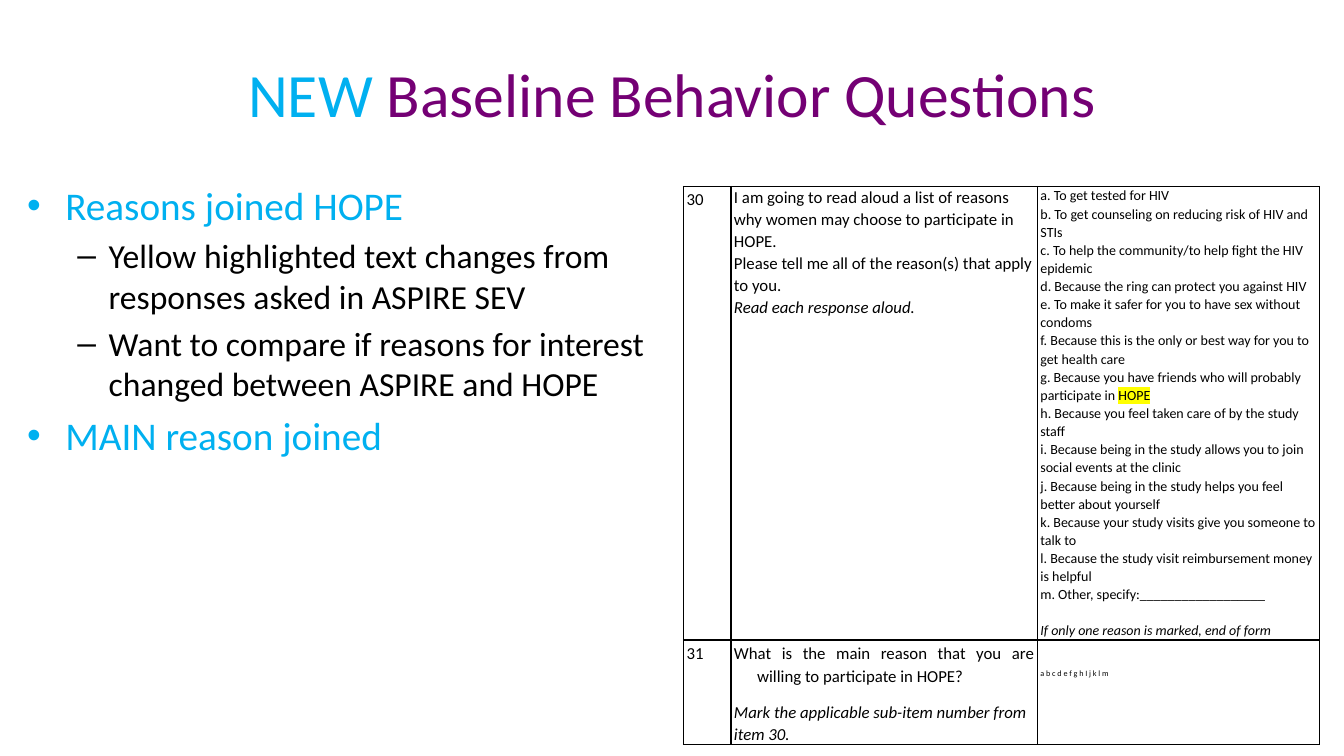
"""Build the slide on new baseline behavior questions."""
from lxml import etree
from pptx import Presentation
from pptx import util as u
from pptx.dml.color import RGBColor
from pptx.enum import text
from pptx.oxml import ns

BLUE = RGBColor(0x00, 0xB0, 0xF0)
PURPLE = RGBColor(0x74, 0x00, 0x74)
BLACK = RGBColor(0, 0, 0)
FONT = "Calibri"

REASONS = [
    "a. To get tested for HIV",
    "b. To get counseling on reducing risk of HIV and STIs",
    "c. To help the community/to help fight the HIV epidemic",
    "d. Because the ring can protect you against HIV",
    "e. To make it safer for you to have sex without condoms",
    "f. Because this is the only or best way for you to get health care",
    "g. Because you have friends who will probably participate in ",
    "h. Because you feel taken care of by the study staff",
    "i. Because being in the study allows you to join social events at the clinic",
    "j. Because being in the study helps you feel better about yourself",
    "k. Because your study visits give you someone to talk to",
    "l. Because the study visit reimbursement money is helpful",
    "m. Other, specify:__________________",
]


def add_element(parent, tag, **attributes):
    """Append a drawing element to its parent."""
    return etree.SubElement(parent, ns.qn(tag), **attributes)


def add_span(para, words, size=12, color=BLACK, italic=False, highlight=None, baseline=None):
    """Add formatted words to a paragraph."""
    span = para.add_run()
    span.text = words
    span.font.name, span.font.size = FONT, u.Pt(size)
    span.font.italic = italic
    span.font.color.rgb = color
    properties = span.font._element
    if highlight:
        mark = etree.Element(ns.qn("a:highlight"))
        add_element(mark, "a:srgbClr", val=highlight)
        properties.find(ns.qn("a:solidFill")).addnext(mark)
    if baseline:
        properties.set("baseline", str(baseline))


def add_para(frame, words, align=None, spacing=None, before=0, after=0,
             margin=0, hanging=0, bullet=None, level=0, **style):
    """Fill the empty first paragraph of a frame or add another one."""
    first = frame.paragraphs[0]
    para = first if not first.runs else frame.add_paragraph()
    para.level = level
    para.alignment = align
    para.line_spacing = spacing
    para.space_before, para.space_after = u.Pt(before), u.Pt(after)
    properties = para._p.get_or_add_pPr()
    properties.set("marL", str(u.Inches(margin)))
    properties.set("indent", str(u.Inches(-hanging)))
    if bullet:
        add_element(properties, "a:buFont", typeface="Arial")
        add_element(properties, "a:buChar", char=bullet)
    add_span(para, words, **style)
    return para


def add_box(page, left, top, width, height, anchor=text.MSO_ANCHOR.TOP):
    """Add a wrapping text box and return its frame."""
    box = page.shapes.add_textbox(*map(u.Inches, (left, top, width, height)))
    frame = box.text_frame
    frame.word_wrap = True
    frame.vertical_anchor = anchor
    return frame


def format_cell(cell):
    """Give a cell black borders, narrow margins and no fill."""
    properties = cell._tc.get_or_add_tcPr()
    for side in "LRTB":
        line = add_element(properties, f"a:ln{side}", w=str(u.Pt(1)))
        fill = add_element(line, "a:solidFill")
        add_element(fill, "a:srgbClr", val=str(BLACK))
    cell.fill.background()
    cell.margin_left = cell.margin_right = u.Inches(0.03)
    cell.margin_top = cell.margin_bottom = 0


def add_grid(page, left, top, widths, heights):
    """Add a plain bordered table."""
    size = (sum(widths), sum(heights))
    table = page.shapes.add_table(
        len(heights), len(widths), *map(u.Inches, (left, top, *size))).table
    table.first_row = table.horz_banding = False
    for column, width in zip(table.columns, widths):
        column.width = u.Inches(width)
    for row, height in zip(table.rows, heights):
        row.height = u.Inches(height)
    for cell in table.iter_cells():
        format_cell(cell)
    return table


def add_title(page):
    """Add the two-colour title."""
    frame = add_box(page, 0.67, 0.3, 12, 1.25, text.MSO_ANCHOR.MIDDLE)
    para = add_para(frame, "NEW", align=text.PP_ALIGN.CENTER, size=44, color=BLUE)
    add_span(para, " Baseline Behavior Questions", size=44, color=PURPLE)


def add_points(page):
    """Add the bulleted list."""
    frame = add_box(page, 0.17, 1.75, 6.38, 5.43)
    main = dict(margin=0.38, hanging=0.38, bullet="•", size=28, color=BLUE)
    detail = dict(level=1, margin=0.81, hanging=0.31, bullet="–", size=24, before=4.8)
    add_para(frame, "Reasons joined HOPE", **main)
    add_para(frame, "Yellow highlighted text changes from responses asked in ASPIRE SEV", **detail)
    add_para(frame, "Want to compare if reasons for interest changed between ASPIRE and HOPE", **detail)
    add_para(frame, "MAIN reason joined", before=5.6, **main)


def add_questions(page):
    """Add the table of questionnaire items."""
    table = add_grid(page, 6.78, 1.85, (0.47, 3.04, 2.8), (4.5, 1.04))
    numbered = dict(margin=0.23, hanging=0.23, spacing=1.15, after=10)
    for row, number in enumerate(("30", "31")):
        add_para(table.cell(row, 0).text_frame, number, **numbered)

    question = table.cell(0, 1).text_frame
    add_para(question, "I am going to read aloud a list of reasons why women may choose "
             "to participate in HOPE.", spacing=1.07)
    add_para(question, "Please tell me all of the reason(s) that apply to you.", spacing=1.07)
    add_para(question, "Read each response aloud.", spacing=1.07, italic=True)

    answers = table.cell(0, 2).text_frame
    for reason in REASONS:
        para = add_para(answers, reason, spacing=1.07, size=10)
        if reason.startswith("g."):
            add_span(para, "HOPE", size=10, highlight="FFFF00")
    add_para(answers, "If only one reason is marked, end of form",
             spacing=1.07, before=12.5, size=10, italic=True)

    question = table.cell(1, 1).text_frame
    add_para(question, "What is the main reason that you are willing to participate in HOPE?",
             align=text.PP_ALIGN.JUSTIFY, **numbered)
    add_para(question, "Mark the applicable sub-item number from item 30.",
             spacing=1.07, italic=True)

    choices = table.cell(1, 2)
    choices.margin_top = u.Inches(0.18)
    add_para(choices.text_frame, "a b c d e f g h I j k l m", spacing=1.07, size=10, baseline=-25000)


def main():
    """Build and save the deck."""
    deck = Presentation()
    deck.slide_width, deck.slide_height = u.Inches(13.33), u.Inches(7.5)
    page = deck.slides.add_slide(deck.slide_layouts[6])
    add_title(page)
    add_points(page)
    add_questions(page)
    deck.save("out.pptx")


if __name__ == "__main__":
    main()
